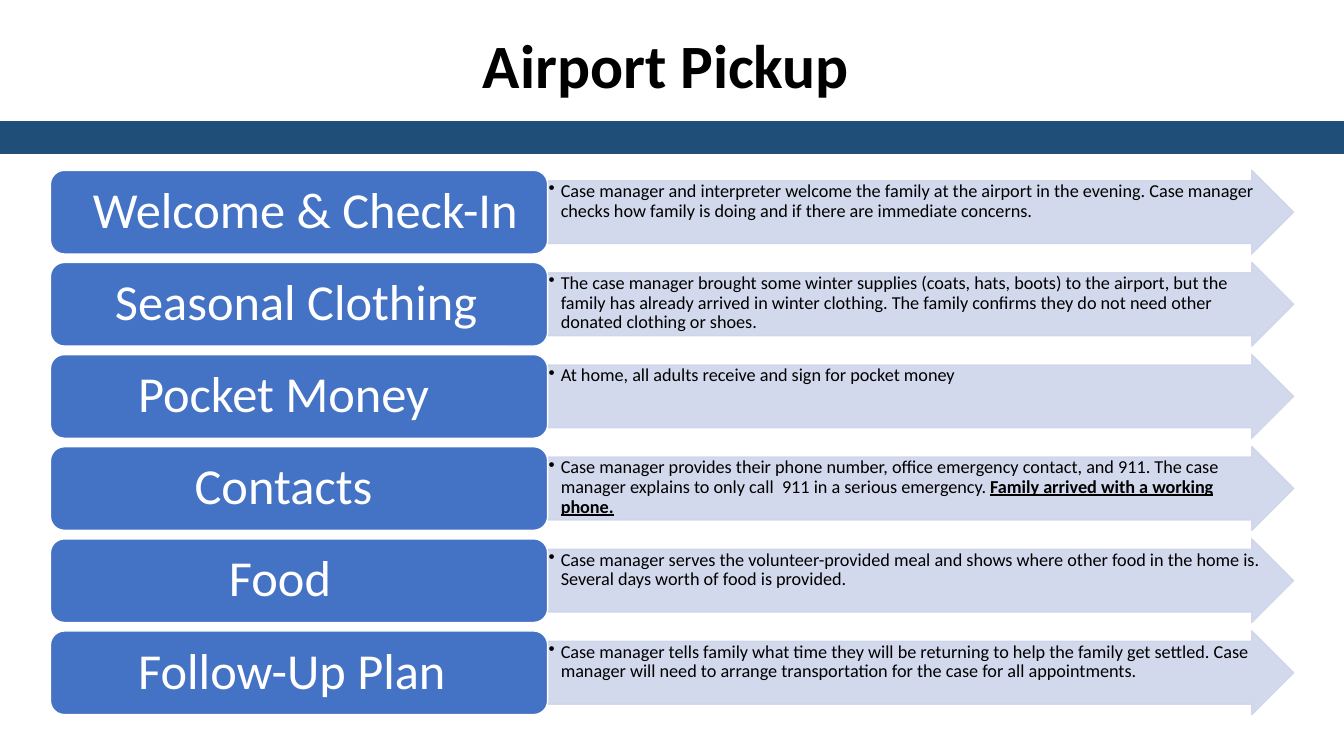
import pptx
import pptx.dml.color
import pptx.enum.shapes
import pptx.enum.text
import pptx.oxml.ns
import pptx.util
from lxml import etree

Inches = pptx.util.Inches
Pt = pptx.util.Pt
SHAPES = pptx.enum.shapes.MSO_SHAPE
ANCHORS = pptx.enum.text.MSO_ANCHOR
ALIGN = pptx.enum.text.PP_ALIGN
qn = pptx.oxml.ns.qn

STEPS = [
    ("Welcome & Check-In", 0.23,
     "Case manager and interpreter welcome the family at the airport in the evening. "
     "Case manager checks how family is doing and if there are immediate concerns.", ""),
    ("Seasonal Clothing", 0.45,
     "The case manager brought some winter supplies (coats, hats, boots) to the airport, "
     "but the family has already arrived in winter clothing. The family confirms they do "
     "not need other donated clothing or shoes.", ""),
    ("Pocket Money", 0.68,
     "At home, all adults receive and sign for pocket money", ""),
    ("Contacts", 1.24,
     "Case manager provides their phone number, office emergency contact, and 911. "
     "The case manager explains to only call  911 in a serious emergency. ",
     "Family arrived with a working phone."),
    ("Food", 1.58,
     "Case manager serves the volunteer-provided meal and shows where other food in the "
     "home is. Several days worth of food is provided.", ""),
    ("Follow-Up Plan", 0.68,
     "Case manager tells family what time they will be returning to help the family get "
     "settled. Case manager will need to arrange transportation for the case for all "
     "appointments.", ""),
]


def color(value):
    return pptx.dml.color.RGBColor.from_string(value)


def format_run(run, size, value, bold=False, underline=False):
    run.font.name = "Calibri"
    run.font.size = Pt(size)
    run.font.color.rgb = color(value)
    run.font.bold = bold
    run.font.underline = underline


def set_margins(text_frame, horizontal, vertical):
    text_frame.margin_left = text_frame.margin_right = Inches(horizontal)
    text_frame.margin_top = text_frame.margin_bottom = Inches(vertical)


def add_box(slide, kind, box, fill, line):
    shape = slide.shapes.add_shape(kind, *(Inches(length) for length in box))
    shape.shadow.inherit = False
    shape.fill.solid()
    shape.fill.fore_color.rgb = color(fill)
    shape.line.color.rgb = color(line)
    shape.line.width = Pt(1)
    return shape


def add_header(slide, width):
    title = slide.shapes.add_textbox(Inches(4.69), Inches(0.22), Inches(3.94), Inches(1.58))
    title.text_frame.word_wrap = True
    title.text_frame.text = "Airport Pickup"
    format_run(title.text_frame.paragraphs[0].runs[0], 44, "000000", bold=True)
    add_box(slide, SHAPES.RECTANGLE, (0, 1.21, width, 0.31), "1F4E79", "1F4E79")


def add_arrow(slide, box, detail, emphasis):
    arrow = add_box(slide, SHAPES.RIGHT_ARROW, box, "CFD5EA", "CFD5EA")
    arrow.adjustments[0], arrow.adjustments[1] = 0.75, 0.5
    for rgb in arrow.element.spPr.iter(qn("a:srgbClr")):
        etree.SubElement(rgb, qn("a:alpha"), val="90000")
    text_frame = arrow.text_frame
    text_frame.word_wrap = True
    text_frame.vertical_anchor = ANCHORS.TOP
    set_margins(text_frame, 0.01, 0.01)
    text_frame.text = detail
    paragraph = text_frame.paragraphs[0]
    paragraph.alignment = ALIGN.LEFT
    paragraph.line_spacing = 0.9
    properties = paragraph._p.get_or_add_pPr()
    properties.set("marL", str(Inches(0.12)))
    properties.set("indent", str(Inches(-0.12)))
    etree.SubElement(properties, qn("a:buChar"), char="•")
    format_run(paragraph.runs[0], 13, "000000")
    if emphasis:
        run = paragraph.add_run()
        run.text = emphasis
        format_run(run, 13, "000000", bold=True, underline=True)


def add_label(slide, box, text, indent):
    label = add_box(slide, SHAPES.ROUNDED_RECTANGLE, box, "4472C4", "FFFFFF")
    text_frame = label.text_frame
    text_frame.word_wrap = True
    text_frame.vertical_anchor = ANCHORS.MIDDLE
    set_margins(text_frame, 0.15, 0.07)
    text_frame.text = text
    paragraph = text_frame.paragraphs[0]
    paragraph.alignment = ALIGN.LEFT
    paragraph.line_spacing = 0.9
    paragraph._p.get_or_add_pPr().set("marL", str(Inches(indent)))
    format_run(paragraph.runs[0], 36, "FFFFFF")


def add_steps(slide, left, top, width, height):
    row_height = 0.83
    label_width = width * 0.4
    pitch = (height - row_height) / (len(STEPS) - 1)
    for index, (name, indent, detail, emphasis) in enumerate(STEPS):
        row_top = top + index * pitch
        add_arrow(slide, (left + label_width, row_top, width - label_width, row_height),
                  detail, emphasis)
        add_label(slide, (left, row_top, label_width, row_height), name, indent)


def main():
    presentation = pptx.Presentation()
    presentation.slide_width = Inches(13.33)
    presentation.slide_height = Inches(7.5)
    slide = presentation.slides.add_slide(presentation.slide_layouts[6])
    add_header(slide, 13.33)
    add_steps(slide, 0.5, 1.69, 12.33, 5.4)
    presentation.save("out.pptx")


if __name__ == "__main__":
    main()
